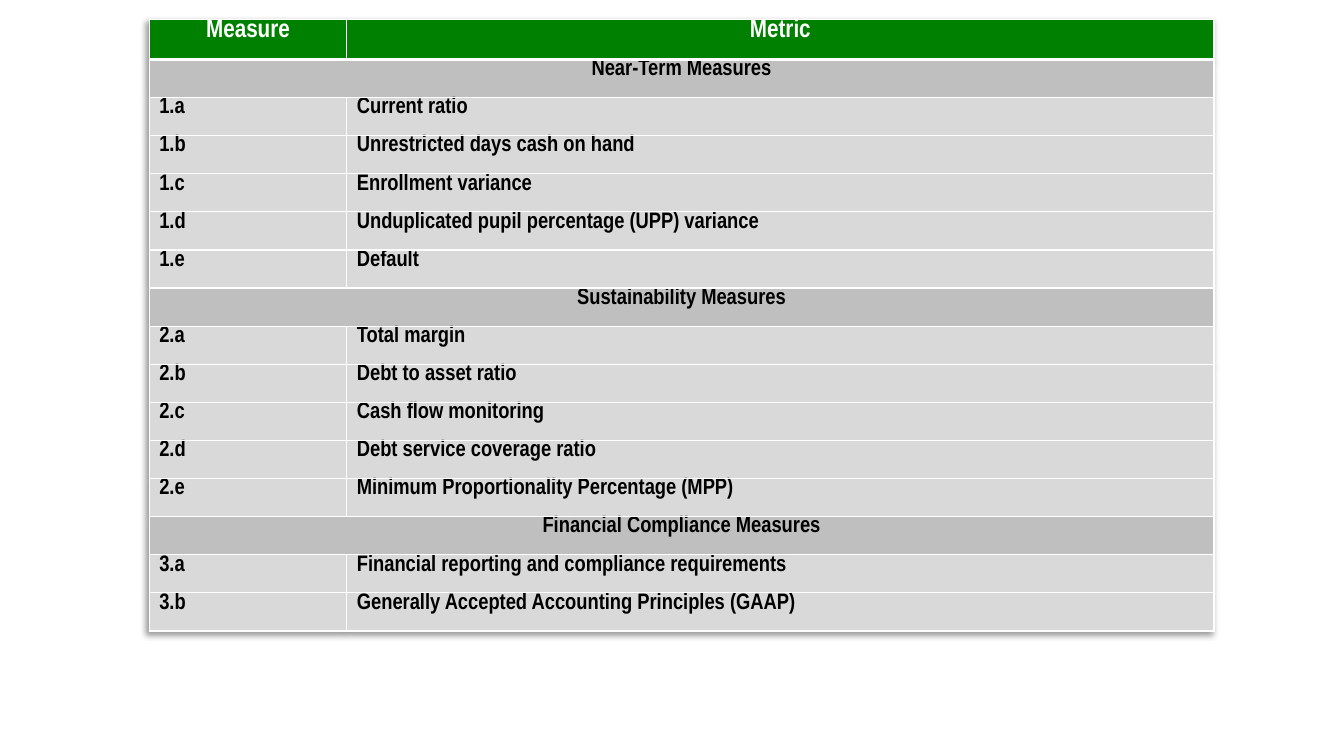
from lxml.etree import SubElement
from pptx import Presentation
from pptx.dml.color import RGBColor
from pptx.enum.text import PP_ALIGN
from pptx.oxml import parse_xml
from pptx.oxml.ns import nsdecls, qn
from pptx.util import Inches, Pt

WHITE = RGBColor(0xFF, 0xFF, 0xFF)
BLACK = RGBColor(0x00, 0x00, 0x00)
GREEN = RGBColor(0x00, 0x80, 0x00)
SECTION_GRAY = RGBColor(0xBF, 0xBF, 0xBF)
ROW_GRAY = RGBColor(0xD9, 0xD9, 0xD9)

FONT = "Arial Narrow"
COLUMN_WIDTHS = (1.96, 8.6)
HEADER_HEIGHT = 0.4
ROW_HEIGHT = 0.378

HEADINGS = ("Measure", "Metric")
SECTIONS = (
    ("Near-Term Measures", (
        ("1.a", "Current ratio"),
        ("1.b", "Unrestricted days cash on hand"),
        ("1.c", "Enrollment variance"),
        ("1.d", "Unduplicated pupil percentage (UPP) variance"),
        ("1.e", "Default"),
    )),
    ("Sustainability Measures", (
        ("2.a", "Total margin"),
        ("2.b", "Debt to asset ratio"),
        ("2.c", "Cash flow monitoring"),
        ("2.d", "Debt service coverage ratio"),
        ("2.e", "Minimum Proportionality Percentage (MPP)"),
    )),
    ("Financial Compliance Measures", (
        ("3.a", "Financial reporting and compliance requirements"),
        ("3.b", "Generally Accepted Accounting Principles (GAAP)"),
    )),
)


def write_text(cell, text, size=16, color=BLACK, align=PP_ALIGN.LEFT):
    para = cell.text_frame.paragraphs[0]
    para.alignment = align
    span = para.add_run()
    span.text = text
    span.font.name = FONT
    span.font.size = Pt(size)
    span.font.bold = True
    span.font.color.rgb = color


def set_borders(cell, top=1, bottom=1):
    properties = cell._tc.get_or_add_tcPr()
    sides = (("L", 1), ("R", 1), ("T", top), ("B", bottom))
    for index, (side, width) in enumerate(sides):
        line = parse_xml(
            f'<a:ln{side} {nsdecls("a")} w="{Pt(width)}"><a:solidFill>'
            f'<a:srgbClr val="{WHITE}"/></a:solidFill></a:ln{side}>'
        )
        properties.insert(index, line)


def style_row(row, fill, **borders):
    for cell in row.cells:
        cell.margin_top = cell.margin_bottom = 0
        cell.fill.solid()
        cell.fill.fore_color.rgb = fill
        set_borders(cell, **borders)


def add_header(row):
    style_row(row, GREEN, bottom=3)
    for cell, heading in zip(row.cells, HEADINGS):
        write_text(cell, heading, size=18, color=WHITE, align=PP_ALIGN.CENTER)


def add_section(row, title, top):
    style_row(row, SECTION_GRAY, top=top)
    first, last = row.cells
    first.merge(last)
    write_text(first, title, align=PP_ALIGN.CENTER)


def add_measure(row, measure):
    style_row(row, ROW_GRAY)
    for cell, text in zip(row.cells, measure):
        write_text(cell, text)


def add_shadow(table):
    effects = parse_xml(
        f'<a:effectLst {nsdecls("a")}><a:outerShdw blurRad="{Pt(4)}" dist="{Pt(3)}" '
        'dir="8100000" algn="tr" rotWithShape="0"/></a:effectLst>'
    )
    color = SubElement(effects[0], qn("a:srgbClr"), val=str(BLACK))
    SubElement(color, qn("a:alpha"), val="40000")
    table._tbl.tblPr.insert(0, effects)


def add_measures_table(page):
    row_count = 1 + sum(1 + len(measures) for _, measures in SECTIONS)
    height = HEADER_HEIGHT + ROW_HEIGHT * (row_count - 1)
    table = page.shapes.add_table(
        row_count, len(COLUMN_WIDTHS), Inches(1.48), Inches(0.19),
        Inches(sum(COLUMN_WIDTHS)), Inches(height),
    ).table
    for column, width in zip(table.columns, COLUMN_WIDTHS):
        column.width = Inches(width)
    for row in table.rows:
        row.height = Inches(ROW_HEIGHT)
    table.rows[0].height = Inches(HEADER_HEIGHT)
    rows = iter(table.rows)
    add_header(next(rows))
    for index, (title, measures) in enumerate(SECTIONS):
        add_section(next(rows), title, top=3 if index == 0 else 1)
        for measure in measures:
            add_measure(next(rows), measure)
    add_shadow(table)


def main():
    deck = Presentation()
    deck.slide_width = Inches(13.33)
    deck.slide_height = Inches(7.5)
    page = deck.slides.add_slide(deck.slide_layouts[6])
    add_measures_table(page)
    deck.save("out.pptx")


if __name__ == "__main__":
    main()
